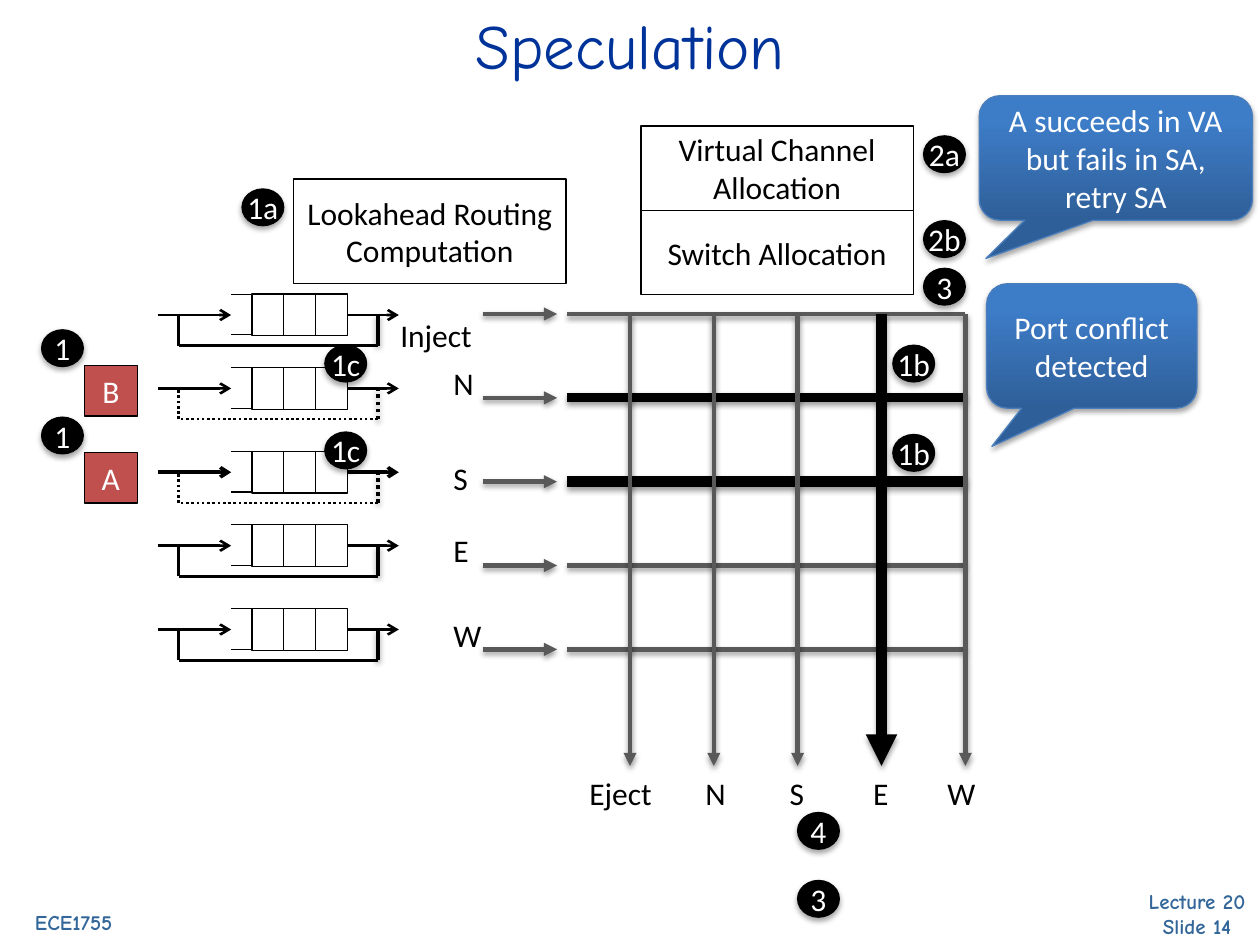
from dataclasses import dataclass

from lxml.etree import SubElement as Sub
from pptx import Presentation as Deck
from pptx.dml.color import RGBColor as RGB
from pptx.enum.dml import MSO_LINE as Dash
from pptx.enum.shapes import MSO_CONNECTOR as Link, MSO_SHAPE as Form
from pptx.enum.text import MSO_ANCHOR as Anchor, PP_ALIGN as Align
from pptx.oxml.ns import qn
from pptx.util import Cm, Pt


@dataclass(frozen=True)
class Theme:
    black: str = "000000"
    white: str = "FFFFFF"
    grey: str = "595959"
    navy: str = "003399"
    steel: str = "336699"
    red: str = "C0504D"
    edge: str = "4B7EBC"
    deep: str = "2F5F99"
    sky: str = "3D7CC7"
    body: str = "Calibri"
    comic: str = "Comic Neue"
    head: int = 36
    text: int = 18
    foot: int = 12
    hair: float = 0.75
    thin: float = 1.5
    mid: float = 2
    wire: float = 2.5


def tint(name):
    return RGB.from_string(name)


def write(frame, text, *, font, size, color, bold=None, align=Align.CENTER,
          anchor=Anchor.MIDDLE, wrap=True):
    frame.word_wrap = wrap
    frame.vertical_anchor = anchor
    para = frame.paragraphs[0]
    para.alignment = align
    run = para.add_run()
    run.text = text
    run.font.name, run.font.size, run.font.bold = font, Pt(size), bold
    run.font.color.rgb = tint(color)


def shade(effects, alpha, drop):
    """Add a soft black shadow below; alpha is in percent, drop in points."""
    outer = Sub(effects, qn("a:outerShdw"), blurRad=str(Pt(3.1)),
                dist=str(Pt(drop)), dir="5400000", rotWithShape="0")
    color = Sub(outer, qn("a:srgbClr"), val="000000")
    Sub(color, qn("a:alpha"), val=str(alpha * 1000))


class Board:
    def __init__(self, slide, theme):
        self.slide, self.theme = slide, theme
        self.area = slide.shapes

    def title(self, text):
        t, head = self.theme, self.slide.shapes.title
        head.left, head.top, head.width, head.height = Cm(1.27), 0, Cm(22.86), Cm(2.54)
        write(head.text_frame, text, font=t.comic, size=t.head, color=t.navy,
              anchor=Anchor.TOP)

    def label(self, text, x, y, w=1.07, h=1.02):
        t = self.theme
        box = self.area.add_textbox(Cm(x), Cm(y), Cm(w), Cm(h))
        write(box.text_frame, text, font=t.body, size=t.text, color=t.black,
              align=Align.LEFT, anchor=Anchor.TOP)

    def footer(self, text, x, y, w, h):
        t = self.theme
        frame = self.area.add_textbox(Cm(x), Cm(y), Cm(w), Cm(h)).text_frame
        frame.margin_left = frame.margin_right = 0
        write(frame, text, font=t.comic, size=t.foot, color=t.steel, bold=True,
              anchor=Anchor.TOP)

    def shape(self, form, x, y, w, h, text="", fill=None, ink=None, wrap=True):
        t = self.theme
        item = self.area.add_shape(form, Cm(x), Cm(y), Cm(w), Cm(h))
        item.shadow.inherit = False
        if fill:
            item.fill.solid()
            item.fill.fore_color.rgb = tint(fill)
        else:
            item.fill.background()
        item.line.color.rgb = tint(t.black)
        item.line.width = Pt(t.hair)
        if text:
            write(item.text_frame, text, font=t.body, size=t.text,
                  color=ink or t.black, wrap=wrap)
        return item

    def badge(self, text, x, y):
        t = self.theme
        dot = self.shape(Form.OVAL, x, y, 0.84, 0.74, text, t.black, t.white, False)
        shade(dot.element.spPr.find(qn("a:effectLst")), 35, 1.8)

    def bubble(self, text, x, y, w, h):
        t = self.theme
        item = self.shape(Form.ROUNDED_RECTANGULAR_CALLOUT, x, y, w, h, text, ink=t.white)
        for i, value in enumerate((-0.475, 0.807, 0.167)):
            item.adjustments[i] = value
        item.fill.gradient()
        item.fill.gradient_angle = 90
        for stop, color, place in zip(item.fill.gradient_stops, (t.deep, t.sky), (0, 0.8)):
            stop.color.rgb, stop.position = tint(color), place
        item.line.color.rgb = tint(t.edge)
        shade(item.element.spPr.find(qn("a:effectLst")), 35, 1.8)

    def line(self, x1, y1, x2, y2, width, color=None, tip=None, dash=None, soft=False):
        item = self.area.add_connector(Link.STRAIGHT, Cm(x1), Cm(y1), Cm(x2), Cm(y2))
        item.line.color.rgb = tint(color or self.theme.black)
        item.line.width = Pt(width)
        if dash:
            item.line.dash_style = dash
        props = item.element.spPr
        if tip:
            Sub(props.find(qn("a:ln")), qn("a:tailEnd"), type=tip)
        effects = Sub(props, qn("a:effectLst"))
        if soft:
            shade(effects, 38, 1.6)
        return item

    def queue(self, top, dash=None, flow=None):
        """Draw a three-cell input buffer with its arrows and return loop."""
        t = self.theme
        flow = flow or t.thin
        left, cell, high = 5.08, 0.64, 0.84
        mid, low = top + high / 2, top + 1.04
        self.area = self.slide.shapes.add_group_shape().shapes
        for i in range(3):
            last = self.shape(Form.RECTANGLE, left + i * cell, top, cell, high)
        for y in (top, top + 0.82):
            self.line(left, y, 4.66, y, t.hair)
        self.line(7.62, low, 7.62, mid, t.mid, dash=dash, soft=True)
        self.line(3.6, low, 3.6, mid, t.thin, dash=dash)
        self.line(7.62, low, 3.6, low, t.thin, dash=dash)
        self.line(3.18, mid, 4.66, mid, flow, tip="arrow")
        out = self.line(left + 3 * cell, mid, 8.04, mid, flow, tip="arrow")
        out.begin_connect(last, 3)
        self.area = self.slide.shapes

    def crossbar(self, rows, cols):
        """Draw the switch; rows and cols map a busy line's index to its width."""
        t = self.theme
        left, top, step, count = 12.7, 6.33, 1.69, 5

        def look(busy, i):
            return (busy[i], t.black) if i in busy else (t.wire, t.grey)

        for i in range(count):
            y = top + i * step
            self.line(11.43, y, left + 4 * step, y, *look(rows, i), soft=True)
            self.line(9.73, y, 11.23, y, t.wire, t.grey, "triangle", soft=True)
        for i in range(count):
            x = left + i * step
            self.line(x, top, x, 15.44, *look(cols, i), tip="triangle", soft=True)


def main():
    deck = Deck()
    deck.slide_width, deck.slide_height = Cm(25.4), Cm(19.05)
    theme = Theme()
    board = Board(deck.slides.add_slide(deck.slide_layouts[5]), theme)

    board.title("Speculation")
    board.footer("Lecture 20 Slide 14", 22.86, 17.78, 2.54, 1.27)
    board.footer("ECE1755", 0, 18.21, 2.97, 0.76)

    board.crossbar(rows={1: 5, 2: 6}, cols={3: 6})
    board.label("Inject", 7.82, 6.25, 2.12)
    for text, y in zip("NSEW", (7.21, 9.12, 10.59, 12.29)):
        board.label(text, 8.89, y)
    board.label("Eject", 11.63, 15.47, 2.12)
    for text, x in zip("NSEW", (13.97, 15.67, 17.35, 18.85)):
        board.label(text, x, 15.47)

    for top in (5.93, 10.58, 12.27):
        board.queue(top)
    board.queue(7.41, Dash.ROUND_DOT)
    board.queue(9.1, Dash.ROUND_DOT, theme.mid)

    for text, x, y, h in (
        ("Lookahead Routing Computation", 5.92, 3.61, 2.11),
        ("Virtual Channel Allocation", 12.92, 2.54, 1.7),
        ("Switch Allocation", 12.92, 4.24, 1.7),
    ):
        board.shape(Form.RECTANGLE, x, y, 5.49, h, text)

    for text, x, y in (
        ("1a", 4.88, 3.81), ("1", 0.84, 6.65), ("1", 0.84, 8.41),
        ("1c", 6.55, 6.96), ("1c", 6.55, 8.71),
        ("1b", 18, 6.96), ("1b", 18, 8.76),
        ("2a", 18.62, 2.74), ("2b", 18.62, 4.45), ("3", 18.62, 5.41),
        ("4", 16.08, 16.38), ("3", 16.08, 17.75),
    ):
        board.badge(text, x, y)

    board.bubble("Port conflict detected", 19.89, 5.72, 4.24, 2.51)
    board.bubble("A succeeds in VA but fails in SA, retry SA", 19.74, 1.93, 5.51, 2.51)
    for text, y in (("B", 7.37), ("A", 9.12)):
        board.shape(Form.RECTANGLE, 1.7, y, 1.07, 1.02, text, theme.red, theme.white)

    deck.save("out.pptx")


if __name__ == "__main__":
    main()
